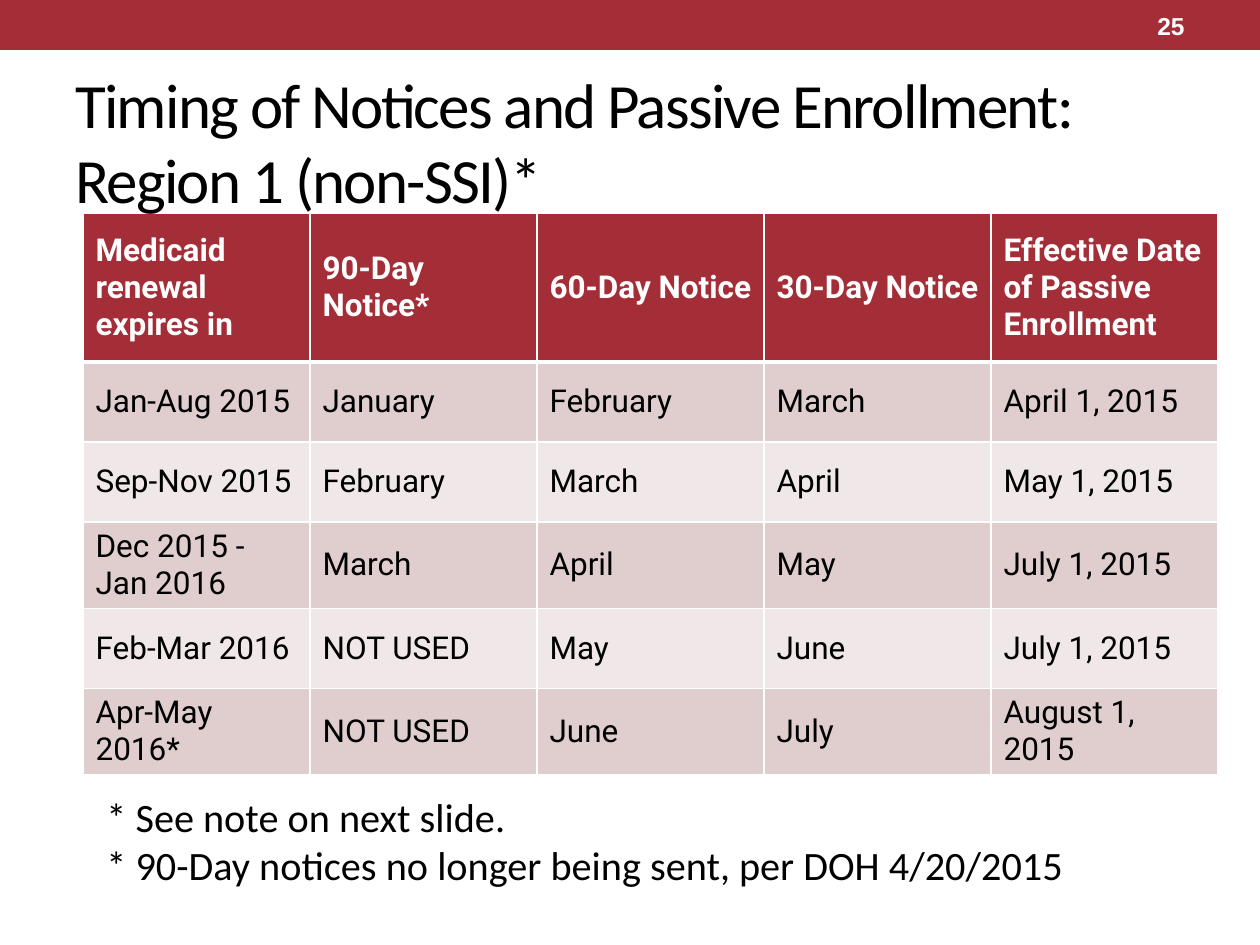
from dataclasses import dataclass

from lxml.etree import SubElement
from pptx import Presentation
from pptx.dml.color import RGBColor
from pptx.enum.shapes import MSO_SHAPE as Shape
from pptx.enum.text import MSO_ANCHOR as Anchor, PP_ALIGN as Align
from pptx.oxml.ns import qn
from pptx.util import Pt

EMU_PER_PX = 914400 / 126


@dataclass(frozen=True)
class Theme:
    red: str = "A32E37"
    band_dark: str = "E0CDCE"
    band_light: str = "F0E8E8"
    white: str = "FFFFFF"
    black: str = "000000"
    title: int = 36
    note: int = 23
    cell: int = 18
    number: int = 14


THEME = Theme()

COLUMN_WIDTH = 227
ROW_HEIGHTS = [149, 80, 80, 80, 80, 72]
SCHEDULE = [
    ["Medicaid renewal expires in", "90-Day Notice*", "60-Day Notice",
     "30-Day Notice", "Effective Date of Passive Enrollment"],
    ["Jan-Aug 2015", "January", "February", "March", "April 1, 2015"],
    ["Sep-Nov 2015", "February", "March", "April", "May 1, 2015"],
    ["Dec 2015 - Jan 2016", "March", "April", "May", "July 1, 2015"],
    ["Feb-Mar 2016", "NOT USED", "May", "June", "July 1, 2015"],
    ["Apr-May 2016*", "NOT USED", "June", "July", "August 1, 2015"],
]
NOTES = [
    "* See note on next slide.",
    "* 90-Day notices no longer being sent, per DOH 4/20/2015",
]


def px(*lengths):
    return [round(length * EMU_PER_PX) for length in lengths]


def write_text(frame, lines, color, align=Align.LEFT, **font_format):
    for index, line in enumerate(lines):
        paragraph = frame.paragraphs[0] if index == 0 else frame.add_paragraph()
        paragraph.alignment = align
        run = paragraph.add_run()
        run.text = line
        for name, value in font_format.items():
            setattr(run.font, name, value)
        run.font.color.rgb = RGBColor.from_string(color)


def add_box(slide, bounds, color):
    shape = slide.shapes.add_shape(Shape.RECTANGLE, *px(*bounds))
    shape.shadow.inherit = False
    shape.fill.solid()
    shape.fill.fore_color.rgb = RGBColor.from_string(color)
    shape.line.fill.background()
    return shape


def add_text(slide, bounds, text, color, **text_format):
    frame = slide.shapes.add_textbox(*px(*bounds)).text_frame
    frame.word_wrap = True
    frame.vertical_anchor = Anchor.MIDDLE
    write_text(frame, [text], color, **text_format)
    return frame


def set_borders(cell, color, widths):
    """Put border lines, in points by side, ahead of the cell's fill."""
    properties = cell._tc.get_or_add_tcPr()
    for index, (side, width) in enumerate(widths.items()):
        line = SubElement(properties, qn(f"a:ln{side}"), w=str(Pt(width)))
        fill = SubElement(line, qn("a:solidFill"))
        SubElement(fill, qn("a:srgbClr"), val=color)
        properties.insert(index, line)


def add_schedule(slide, left, top):
    columns = len(SCHEDULE[0])
    size = (COLUMN_WIDTH * columns, sum(ROW_HEIGHTS))
    table = slide.shapes.add_table(
        len(SCHEDULE), columns, *px(left, top, *size)).table
    for column in table.columns:
        column.width, = px(COLUMN_WIDTH)
    for index, (row, height) in enumerate(zip(table.rows, ROW_HEIGHTS)):
        row.height, = px(height)
        header = index == 0
        band = THEME.band_dark if index % 2 else THEME.band_light
        widths = {"L": 1, "R": 1, "T": 3 if index == 1 else 1, "B": 3 if header else 1}
        for cell, text in zip(row.cells, SCHEDULE[index]):
            cell.vertical_anchor = Anchor.MIDDLE
            cell.fill.solid()
            cell.fill.fore_color.rgb = RGBColor.from_string(
                THEME.red if header else band)
            set_borders(cell, THEME.white, widths)
            write_text(cell.text_frame, [text],
                       THEME.white if header else THEME.black,
                       name="Roboto", size=Pt(THEME.cell), bold=header)


def add_title(slide):
    frame = add_text(slide, (63, 73, 1134, 136),
                     "Timing of Notices and Passive Enrollment: Region 1 (non-SSI)*",
                     THEME.black, name="Calibri", size=Pt(THEME.title))
    run = frame.paragraphs[0].runs[0]
    run.font._element.set("spc", "-100")


def add_notes(slide):
    frame = add_box(slide, (94, 786, 1125, 159), THEME.white).text_frame
    frame.word_wrap = True
    frame.vertical_anchor = Anchor.TOP
    write_text(frame, NOTES, THEME.black, name="Calibri", size=Pt(THEME.note))


def main():
    presentation = Presentation()
    presentation.slide_width, presentation.slide_height = px(1260, 945)
    slide = presentation.slides.add_slide(presentation.slide_layouts[6])
    add_box(slide, (0, 0, 1260, 50), THEME.red)
    add_schedule(slide, 83, 213)
    add_title(slide)
    add_notes(slide)
    add_text(slide, (1050, 3, 147, 45), "25", THEME.white, align=Align.RIGHT,
             name="Arial", size=Pt(THEME.number), bold=True)
    presentation.save("out.pptx")


if __name__ == "__main__":
    main()
